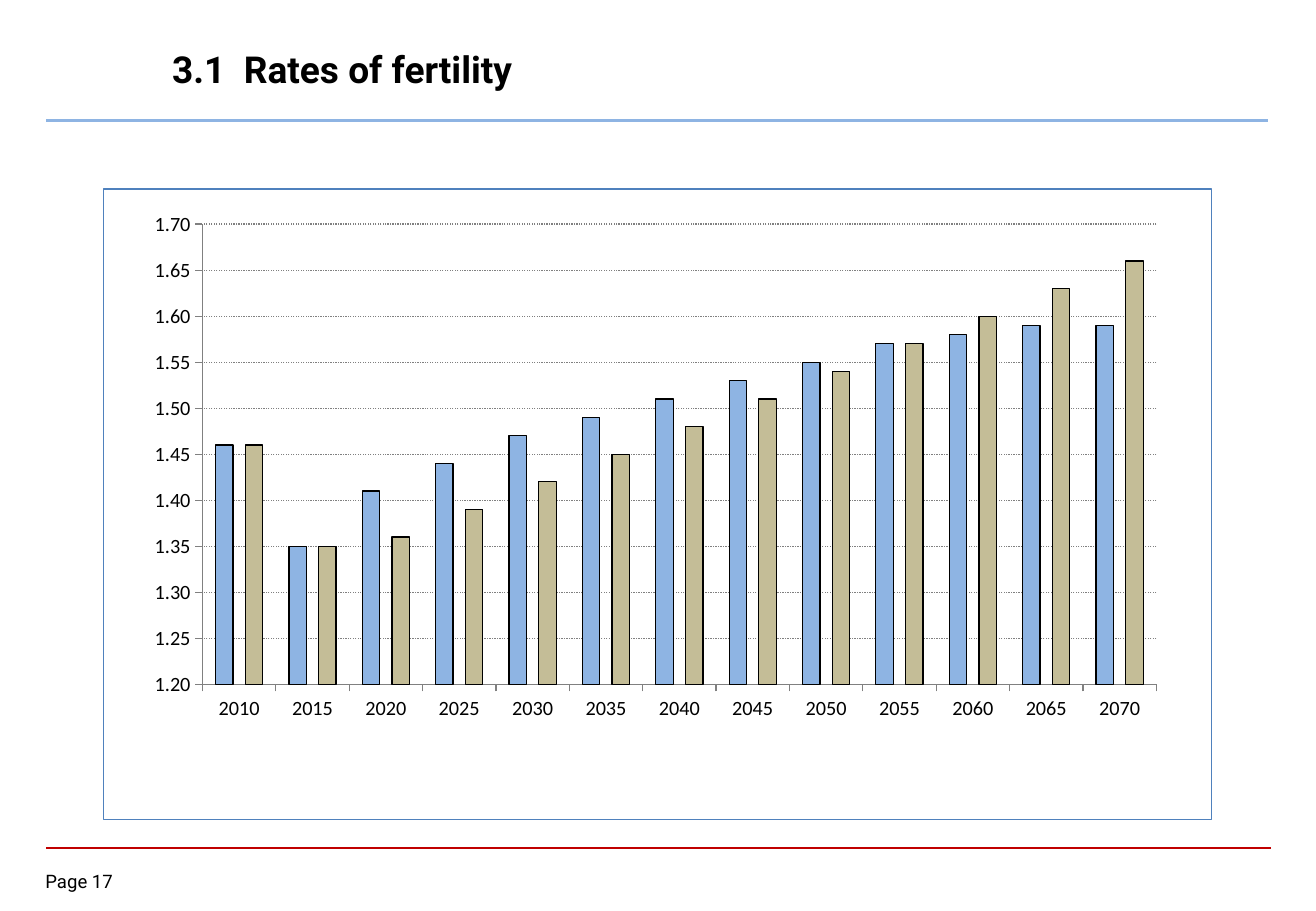
from dataclasses import dataclass

from lxml import etree
from pptx import Presentation
from pptx.chart.data import CategoryChartData
from pptx.dml.color import RGBColor
from pptx.enum import chart as ch, dml, shapes, text
from pptx.oxml import ns, parse_xml
from pptx.util import Pt


@dataclass(frozen=True)
class Theme:
    """Colours, fonts and type sizes of the slide."""
    ink: str = "000000"
    blue: str = "8EB4E3"
    tan: str = "C4BD97"
    red: str = "C00000"
    frame: str = "4F81BD"
    grey: str = "808080"
    text_font: str = "Roboto"
    chart_font: str = "Calibri"
    title_size: int = 22
    axis_size: int = 12
    page_size: int = 11


THEME = Theme()
YEARS = [str(year) for year in range(2010, 2071, 5)]
RATES = [
    ("National", THEME.blue,
     [1.46, 1.35, 1.41, 1.44, 1.47, 1.49, 1.51, 1.53, 1.55, 1.57, 1.58, 1.59, 1.59]),
    ("European", THEME.tan,
     [1.46, 1.35, 1.36, 1.39, 1.42, 1.45, 1.48, 1.51, 1.54, 1.57, 1.6, 1.63, 1.66]),
]


def style_line(line, color, width):
    """Give a line its colour and width."""
    line.color.rgb = RGBColor.from_string(color)
    line.width = Pt(width)


def style_font(font, name, size, bold=False):
    """Give a font its name, size, weight and ink colour."""
    font.name, font.size, font.bold = name, Pt(size), bold
    font.color.rgb = RGBColor.from_string(THEME.ink)


def add_rule(s, x, y, w, color, width):
    """Draw a horizontal rule."""
    c = s.shapes.add_connector(
        shapes.MSO_CONNECTOR.STRAIGHT, Pt(x), Pt(y), Pt(x + w), Pt(y))
    style_line(c.line, color, width)
    etree.SubElement(c._element.spPr, ns.qn("a:effectLst"))


def add_label(s, x, y, w, h, words, size, bold=False, inset=0):
    """Place one line of text, centred vertically."""
    tf = s.shapes.add_textbox(Pt(x), Pt(y), Pt(w), Pt(h)).text_frame
    tf.word_wrap = True
    tf.vertical_anchor = text.MSO_ANCHOR.MIDDLE
    tf.margin_left = tf.margin_right = Pt(inset)
    tf.margin_top = tf.margin_bottom = 0
    r = tf.paragraphs[0].add_run()
    r.text = words
    style_font(r.font, THEME.text_font, size, bold)


def add_header(s, x, y, w, h):
    """Fill the header box with the title above a blue rule."""
    add_label(s, x + 67.7, y, 471, h - 5, "3.1  Rates of fertility",
              THEME.title_size, bold=True, inset=7.2)
    add_rule(s, x, y + h, w, THEME.blue, 1.5)


def add_footer(s, x, y, w, h):
    """Fill the footer box with a red rule above the page number."""
    add_rule(s, x, y, w, THEME.red, 1)
    add_label(s, x - 0.4, y + h - 16, 52.6, 16, "Page 17", THEME.page_size)


def frame_chart(chart, plot):
    """Set the chart border and the inner plot area as fractions of the chart."""
    space = chart._chartSpace
    declared = ns.nsdecls("c", "a")
    space.find(ns.qn("c:chart")).addnext(parse_xml(
        f'<c:spPr {declared}><a:noFill/><a:ln w="9525"><a:solidFill>'
        f'<a:srgbClr val="{THEME.frame}"/></a:solidFill></a:ln></c:spPr>'))
    modes = "".join(f'<c:{k}Mode val="edge"/>' for k in "xy")
    sizes = "".join(f'<c:{k} val="{v}"/>' for k, v in zip("xywh", plot))
    area = space.find(".//" + ns.qn("c:plotArea"))
    for old in area.findall(ns.qn("c:layout")):
        area.remove(old)
    area.insert(0, parse_xml(
        f'<c:layout {declared}><c:manualLayout><c:layoutTarget val="inner"/>'
        f'{modes}{sizes}</c:manualLayout></c:layout>'))


def add_rates_chart(s, x, y, w, h):
    """Fill the box with the clustered columns of fertility rates."""
    data = CategoryChartData(number_format="0.00")
    data.categories = YEARS
    for name, _, values in RATES:
        data.add_series(name, values)
    chart = s.shapes.add_chart(
        ch.XL_CHART_TYPE.COLUMN_CLUSTERED, Pt(x), Pt(y), Pt(w), Pt(h), data).chart
    chart.has_title = chart.has_legend = False
    style_font(chart.font, THEME.chart_font, THEME.axis_size)
    frame_chart(chart, (0.089, 0.056, 0.861, 0.73))

    plot = chart.plots[0]
    plot.vary_by_categories = False
    plot.gap_width, plot.overlap = 150, -70
    for series, (_, color, _) in zip(plot.series, RATES):
        series.format.fill.solid()
        series.format.fill.fore_color.rgb = RGBColor.from_string(color)
        style_line(series.format.line, THEME.ink, 0.75)

    for axis in (chart.category_axis, chart.value_axis):
        axis.major_tick_mark = ch.XL_TICK_MARK.OUTSIDE
        axis.minor_tick_mark = ch.XL_TICK_MARK.NONE
        style_line(axis.format.line, THEME.grey, 0.75)
        style_font(axis.tick_labels.font, THEME.chart_font, THEME.axis_size)
    rates = chart.value_axis
    rates.minimum_scale, rates.maximum_scale, rates.major_unit = 1.2, 1.7, 0.05
    rates.tick_labels.number_format = "0.00"
    rates.tick_labels.number_format_is_linked = False
    rates.has_major_gridlines = True
    grid = rates.major_gridlines.format.line
    style_line(grid, THEME.grey, 0.75)
    grid.dash_style = dml.MSO_LINE.ROUND_DOT


def main():
    """Build the slide and save it."""
    prs = Presentation()
    prs.slide_width, prs.slide_height = Pt(780), Pt(540)
    s = prs.slides.add_slide(prs.slide_layouts[6])
    add_header(s, 27.3, 15.3, 724.5, 56)
    add_rates_chart(s, 61.2, 111.6, 657.4, 374.4)
    add_footer(s, 27.3, 502.6, 725.8, 27.6)
    prs.save("out.pptx")


if __name__ == "__main__":
    main()
